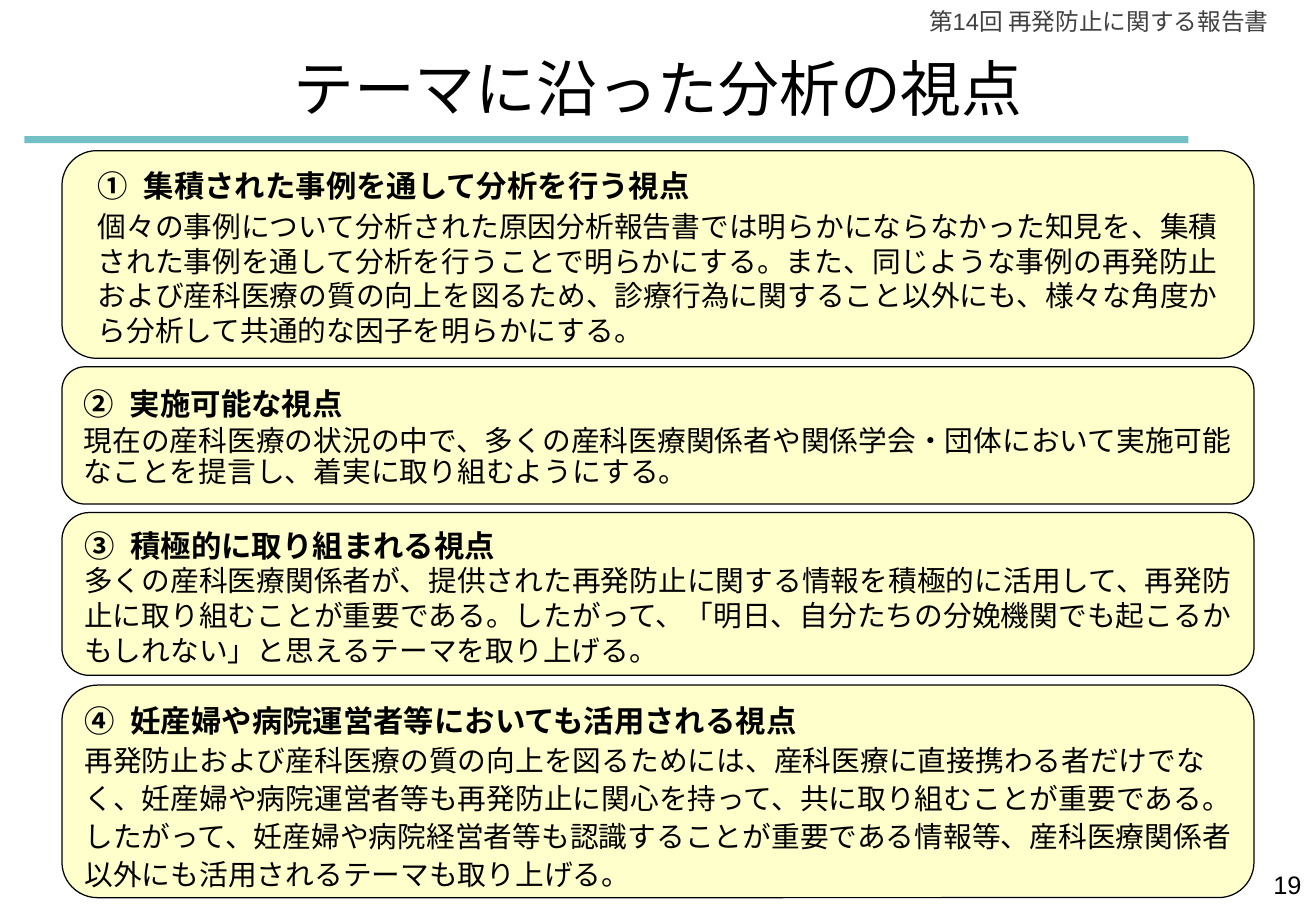
from dataclasses import dataclass

from lxml.etree import SubElement
from pptx import Presentation
from pptx.dml.color import RGBColor
from pptx.enum.lang import MSO_LANGUAGE_ID
from pptx.enum.shapes import MSO_SHAPE
from pptx.enum.text import MSO_ANCHOR, PP_ALIGN
from pptx.oxml.ns import qn
from pptx.slide import Slide
from pptx.util import Emu, Pt

COLORS = {
    "bar": "72BFC5",
    "panel": "FFFFCC",
    "ink": "000000",
    "header": "404040",
}
GOTHIC = "Noto Sans CJK JP"
ARIAL = "Arial"
PX_PER_INCH = 100
PANEL_LEFT, PANEL_WIDTH = 51, 981
HEADING_INDENT = 38


@dataclass(frozen=True)
class Label:
    text: str
    left: int
    top: int
    width: int
    height: int
    size: int
    font: str
    color: str
    align: PP_ALIGN
    anchor: MSO_ANCHOR = MSO_ANCHOR.TOP


@dataclass(frozen=True)
class Viewpoint:
    top: int
    height: int
    heading: str
    body: str
    heading_line: float
    body_line: float
    gap: float


LABELS = [
    Label("第14回 再発防止に関する報告書", 738, 1, 316, 34, 14, ARIAL, "header", PP_ALIGN.RIGHT),
    Label("テーマに沿った分析の視点", 228, 36, 627, 71, 36, GOTHIC, "ink", PP_ALIGN.CENTER,
          MSO_ANCHOR.MIDDLE),
    Label("19", 828, 711, 253, 52, 15, ARIAL, "ink", PP_ALIGN.RIGHT),
]

VIEWPOINTS = [
    Viewpoint(
        124, 171, "集積された事例を通して分析を行う視点",
        "個々の事例について分析された原因分析報告書では明らかにならなかった知見を、"
        "集積された事例を通して分析を行うことで明らかにする。また、同じような事例の"
        "再発防止および産科医療の質の向上を図るため、診療行為に関すること以外にも、"
        "様々な角度から分析して共通的な因子を明らかにする。",
        25, 20.5, 3),
    Viewpoint(
        302, 113, "実施可能な視点",
        "現在の産科医療の状況の中で、多くの産科医療関係者や関係学会・団体において"
        "実施可能なことを提言し、着実に取り組むようにする。",
        23, 18.4, 3),
    Viewpoint(
        422, 134, "積極的に取り組まれる視点",
        "多くの産科医療関係者が、提供された再発防止に関する情報を積極的に活用して、"
        "再発防止に取り組むことが重要である。したがって、「明日、自分たちの分娩機関でも"
        "起こるかもしれない」と思えるテーマを取り上げる。",
        25, 20.5, 0),
    Viewpoint(
        564, 175, "妊産婦や病院運営者等においても活用される視点",
        "再発防止および産科医療の質の向上を図るためには、産科医療に直接携わる者だけでなく、"
        "妊産婦や病院運営者等も再発防止に関心を持って、共に取り組むことが重要である。"
        "したがって、妊産婦や病院経営者等も認識することが重要である情報等、"
        "産科医療関係者以外にも活用されるテーマも取り上げる。",
        28, 22.5, 0),
]


def px(length: int) -> Emu:
    return Emu(length * 914400 // PX_PER_INCH)


def rgb(name: str) -> RGBColor:
    return RGBColor.from_string(COLORS[name])


def format_runs(paragraph, size: int, font: str, color: str, bold: bool = False) -> None:
    for run in paragraph.runs:
        run.font.size = Pt(size)
        run.font.bold = bold
        run.font.color.rgb = rgb(color)
        run.font.name = font
        run.font.language_id = MSO_LANGUAGE_ID.JAPANESE
        SubElement(run.font._element, qn("a:ea"), typeface=GOTHIC)


def number_heading(paragraph, number: int) -> None:
    properties = paragraph._p.get_or_add_pPr()
    properties.set("marL", str(px(HEADING_INDENT)))
    properties.set("indent", str(-px(HEADING_INDENT)))
    SubElement(properties, qn("a:buFont"), typeface=GOTHIC)
    SubElement(properties, qn("a:buAutoNum"), type="circleNumDbPlain", startAt=str(number))


def draw_bar(slide: Slide) -> None:
    bar = slide.shapes.add_shape(MSO_SHAPE.RECTANGLE, px(20), px(112), px(958), px(6))
    bar.shadow.inherit = False
    bar.fill.solid()
    bar.fill.fore_color.rgb = rgb("bar")
    bar.line.fill.background()


def draw_label(slide: Slide, label: Label) -> None:
    box = slide.shapes.add_textbox(px(label.left), px(label.top), px(label.width), px(label.height))
    frame = box.text_frame
    frame.word_wrap = True
    frame.vertical_anchor = label.anchor
    frame.text = label.text
    paragraph = frame.paragraphs[0]
    paragraph.alignment = label.align
    format_runs(paragraph, label.size, label.font, label.color)


def draw_viewpoint(slide: Slide, number: int, viewpoint: Viewpoint) -> None:
    panel = slide.shapes.add_shape(MSO_SHAPE.ROUNDED_RECTANGLE, px(PANEL_LEFT), px(viewpoint.top),
                                   px(PANEL_WIDTH), px(viewpoint.height))
    panel.adjustments[0] = 0.167
    panel.shadow.inherit = False
    panel.fill.solid()
    panel.fill.fore_color.rgb = rgb("panel")
    panel.line.color.rgb = rgb("ink")
    panel.line.width = Pt(0.75)

    frame = panel.text_frame
    frame.word_wrap = True
    frame.vertical_anchor = MSO_ANCHOR.MIDDLE
    frame._txBody.bodyPr.set("anchorCtr", "1")
    frame.text = viewpoint.heading
    heading = frame.paragraphs[0]
    number_heading(heading, number)
    heading.line_spacing = Pt(viewpoint.heading_line)
    body = frame.add_paragraph()
    body.text = viewpoint.body
    body.line_spacing = Pt(viewpoint.body_line)
    body.space_before = Pt(viewpoint.gap)
    for paragraph in (heading, body):
        paragraph.alignment = PP_ALIGN.LEFT
    format_runs(heading, 18, GOTHIC, "ink", bold=True)
    format_runs(body, 17, GOTHIC, "ink")


def main() -> None:
    presentation = Presentation()
    presentation.slide_width = px(1083)
    presentation.slide_height = px(750)
    slide = presentation.slides.add_slide(presentation.slide_layouts[6])
    draw_bar(slide)
    for number, viewpoint in enumerate(VIEWPOINTS, start=1):
        draw_viewpoint(slide, number, viewpoint)
    for label in LABELS:
        draw_label(slide, label)
    presentation.save("out.pptx")


if __name__ == "__main__":
    main()
